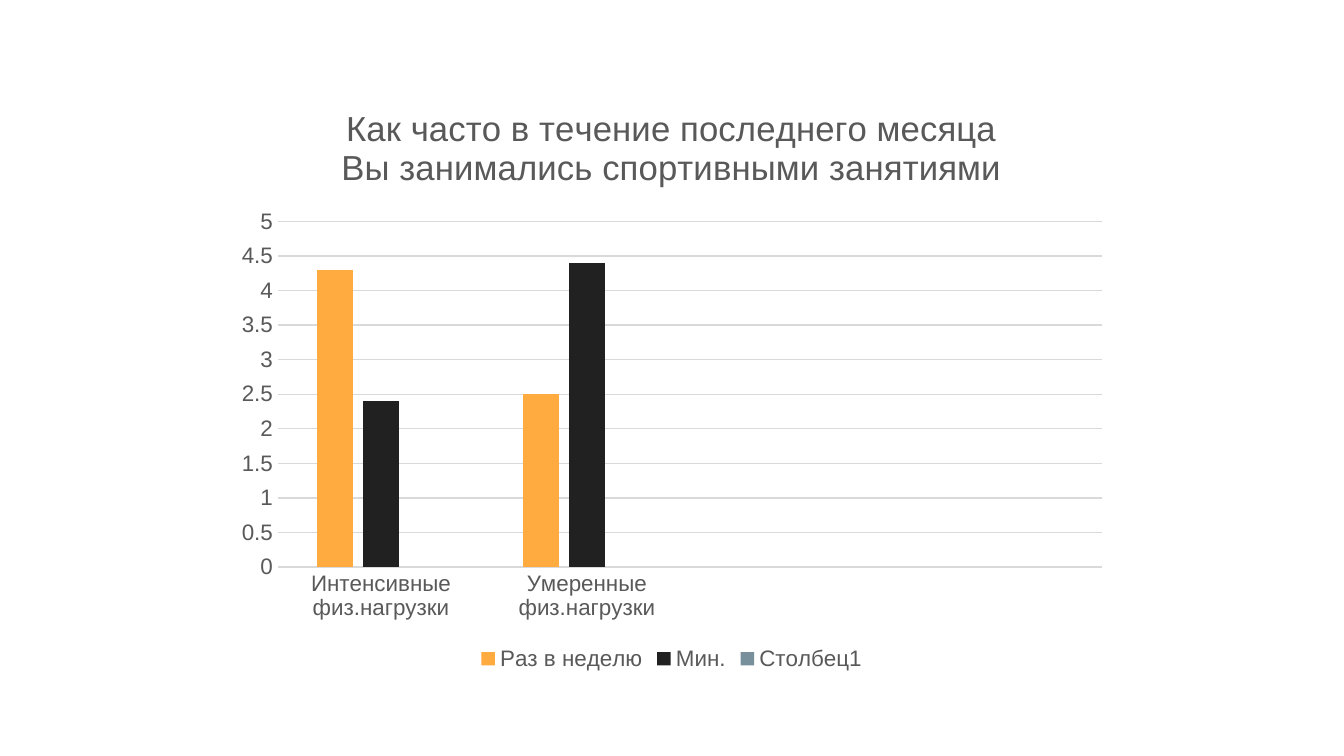
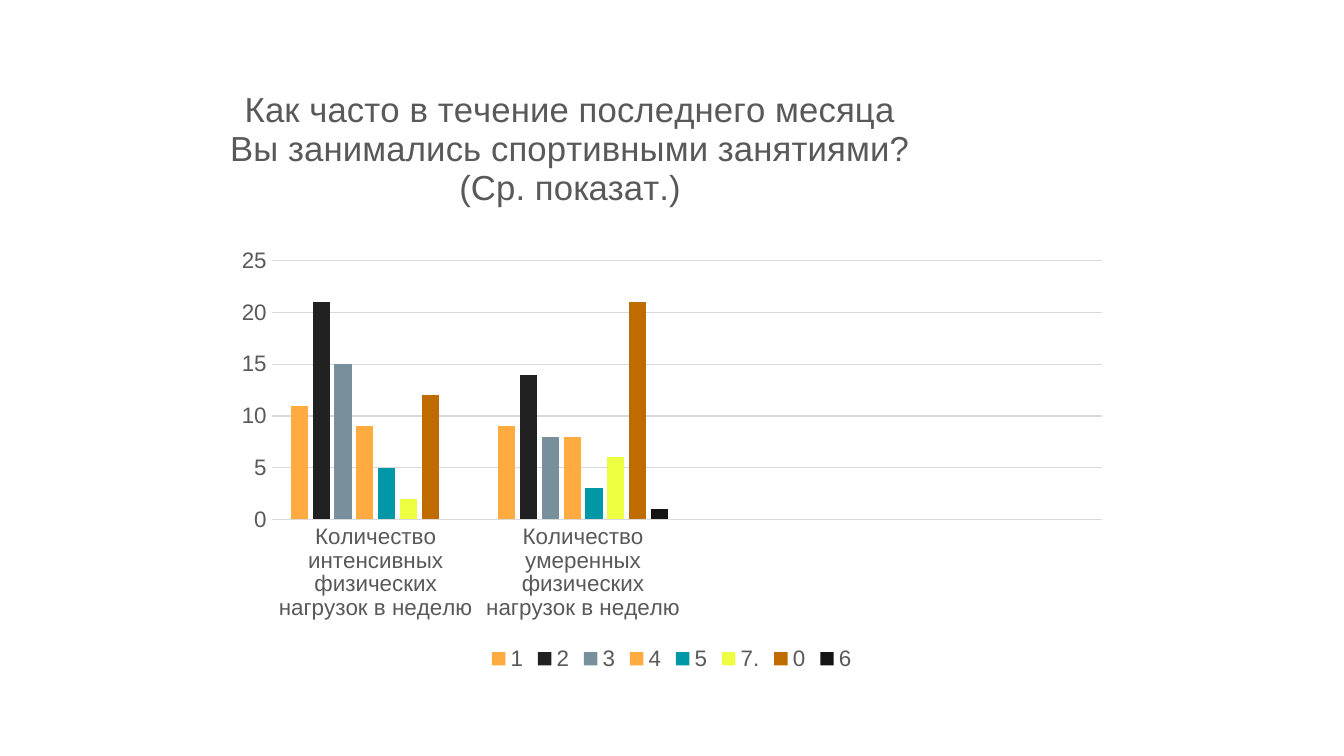
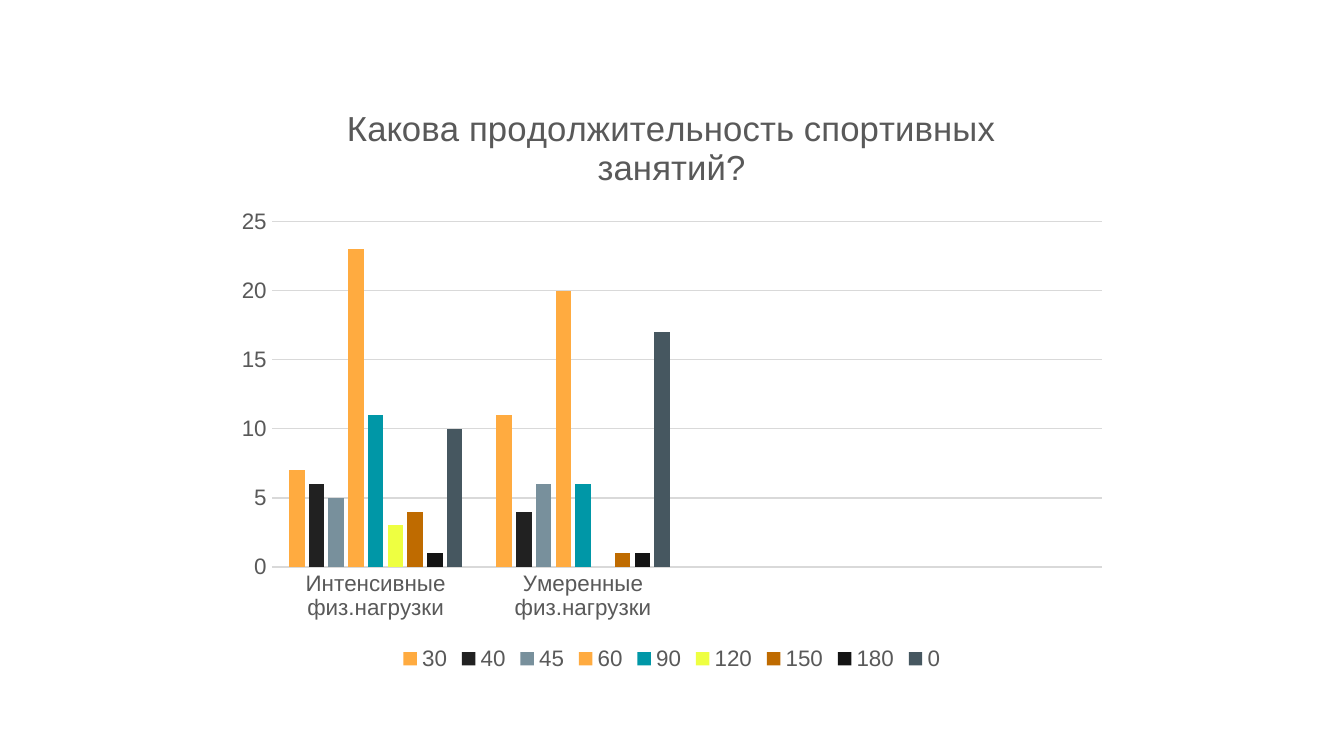
from lxml.etree import SubElement
from pptx import Presentation
from pptx.chart.data import CategoryChartData
from pptx.dml.color import RGBColor
from pptx.enum.chart import XL_CHART_TYPE, XL_LEGEND_POSITION, XL_TICK_MARK
from pptx.oxml.ns import qn
from pptx.util import Cm, Pt

COLORS = {
    "text": "595959", "grid": "D9D9D9", "amber": "FFAB40", "coal": "212121",
    "steel": "78909C", "teal": "0097A7", "lime": "EEFF41", "brown": "BF6B00",
    "black": "141414", "slate": "465760",
}
CYCLE = ("amber", "coal", "steel", "amber", "teal", "lime", "brown", "black", "slate")
FRAME = (Cm(4.23), Cm(1.5), Cm(16.93), Cm(11.28))
LABEL = {"name": "Arial", "size": Pt(12), "bold": False}
TITLE = {**LABEL, "size": Pt(18.6)}
BARS = {"gap_width": 219, "overlap": -27, "vary_by_categories": False}
AXIS = {"major_tick_mark": XL_TICK_MARK.NONE, "minor_tick_mark": XL_TICK_MARK.NONE}
LEGEND = {"position": XL_LEGEND_POSITION.BOTTOM, "include_in_layout": False}
SLOTS = 4

LOADS = ("Интенсивные физ.нагрузки", "Умеренные физ.нагрузки")
SLIDES = (
    {
        "title": "Как часто в течение последнего месяца Вы занимались спортивными занятиями",
        "cats": LOADS,
        "rows": {"Раз в неделю": (4.3, 2.5), "Мин.": (2.4, 4.4), "Столбец1": ()},
    },
    {
        "title": "Как часто в течение последнего месяца Вы занимались "
                 "спортивными занятиями? (Ср. показат.)",
        "cats": ("Количество интенсивных физических нагрузок в неделю",
                 "Количество умеренных физических нагрузок в неделю"),
        "rows": {"1": (11, 9), "2": (21, 14), "3": (15, 8), "4": (9, 8), "5": (5, 3),
                 "7.": (2, 6), "0": (12, 21), "6": (None, 1)},
        "place": {"x": 0, "y": -0.01},
    },
    {
        "title": "Какова продолжительность спортивных занятий?",
        "cats": LOADS,
        "rows": {"30": (7, 11), "40": (6, 4), "45": (5, 6), "60": (23, 20), "90": (11, 6),
                 "120": (3, None), "150": (4, 1), "180": (1, 1), "0": (10, 17)},
    },
)


def apply(item, values):
    """Set each attribute in values on the item."""
    for name, value in values.items():
        setattr(item, name, value)


def tint(name):
    """Return the named colour."""
    return RGBColor.from_string(COLORS[name])


def style_font(font, values):
    """Format a font in the shared text colour."""
    apply(font, values)
    font.color.rgb = tint("text")


def draw_line(line):
    """Make a thin grey chart line."""
    line.width = Pt(0.75)
    line.color.rgb = tint("grid")


def pad(items, blank):
    """Fill a row up to the number of category slots."""
    return [*items, *[blank] * (SLOTS - len(items))]


def add_title(chart, text, place):
    """Write the chart title, at a fixed place if one is given."""
    chart.has_title = True
    title = chart.chart_title
    run = title.text_frame.paragraphs[0].add_run()
    run.text = text
    style_font(run.font, TITLE)
    if place:
        layout = title._element.find(qn("c:layout"))
        manual = SubElement(layout, qn("c:manualLayout"))
        for axis in place:
            SubElement(manual, qn(f"c:{axis}Mode")).set("val", "edge")
        for axis, value in place.items():
            SubElement(manual, qn(f"c:{axis}")).set("val", str(value))


def style_axes(chart):
    """Format both axes and the grid."""
    for axis in (chart.category_axis, chart.value_axis):
        apply(axis, AXIS)
        style_font(axis.tick_labels.font, LABEL)
    draw_line(chart.category_axis.format.line)
    chart.value_axis.format.line.fill.background()
    draw_line(chart.value_axis.major_gridlines.format.line)


def add_columns(slide, title, cats, rows, place=None):
    """Add a column chart with its title, axes and legend."""
    data = CategoryChartData()
    data.categories = pad(cats, "")
    for name, values in rows.items():
        data.add_series(name, pad(values, None))
    chart = slide.shapes.add_chart(XL_CHART_TYPE.COLUMN_CLUSTERED, *FRAME, data).chart
    apply(chart.font, {"name": "Arial", "size": Pt(10)})
    add_title(chart, title, place)
    style_axes(chart)
    chart.has_legend = True
    apply(chart.legend, LEGEND)
    style_font(chart.legend.font, LABEL)
    plot = chart.plots[0]
    apply(plot, BARS)
    for series, color in zip(plot.series, CYCLE):
        series.format.fill.solid()
        series.format.fill.fore_color.rgb = tint(color)


def main():
    """Build the deck."""
    deck = Presentation()
    apply(deck, {"slide_width": Cm(25.4), "slide_height": Cm(14.29)})
    for content in SLIDES:
        add_columns(deck.slides.add_slide(deck.slide_layouts[6]), **content)
    deck.save("out.pptx")


if __name__ == "__main__":
    main()
